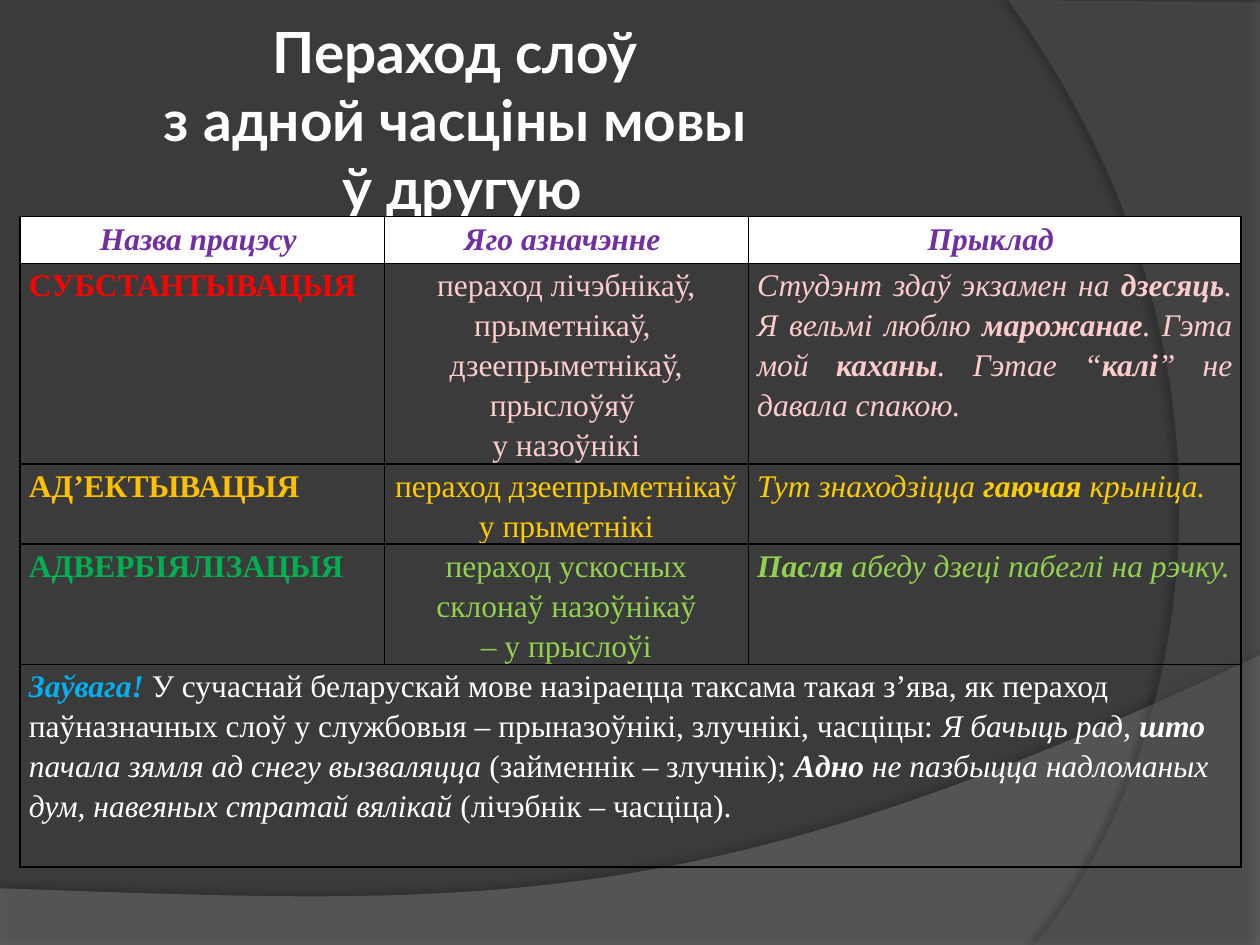
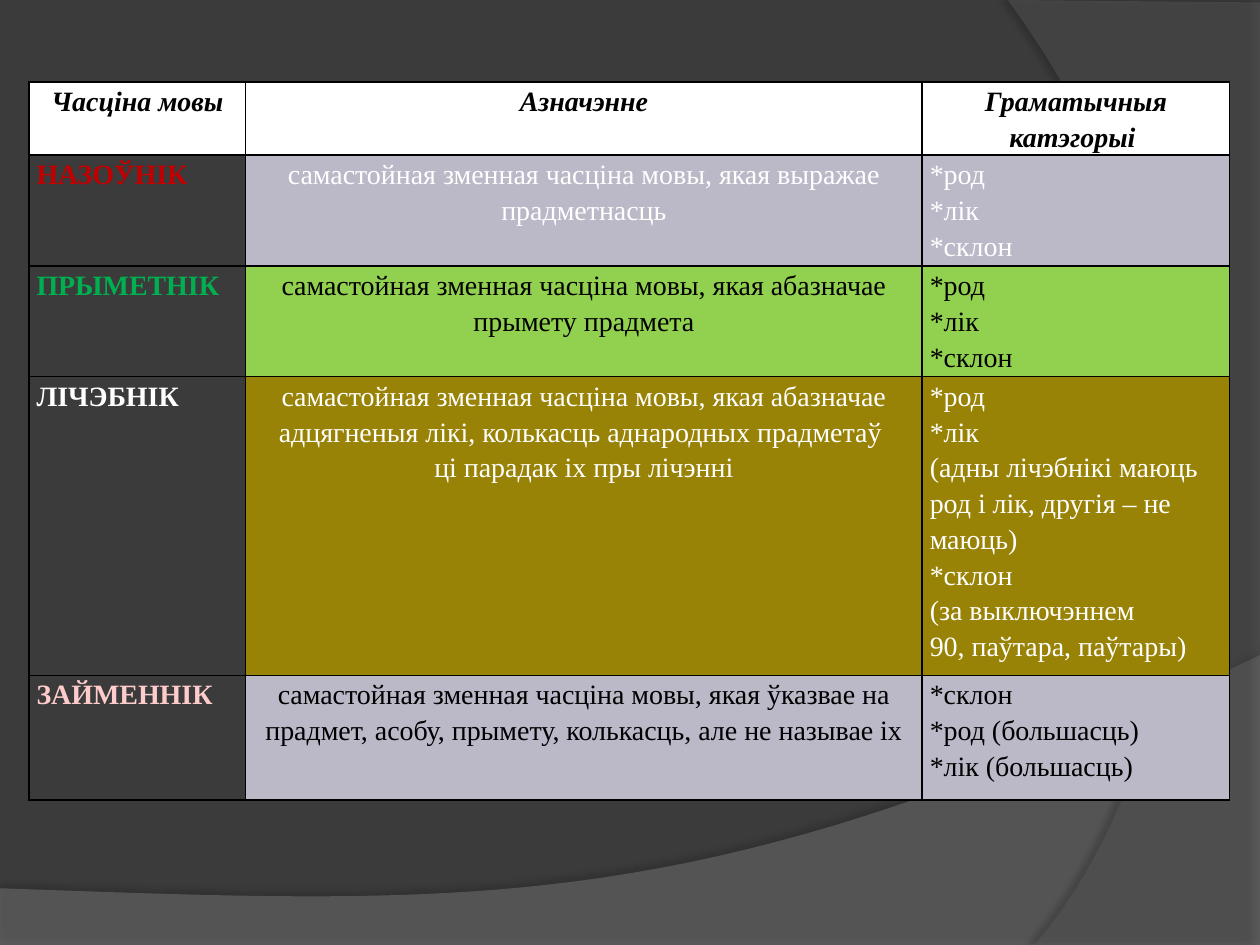
from lxml.etree import SubElement
from pptx import Presentation
from pptx.dml.color import RGBColor
from pptx.enum.text import MSO_ANCHOR as Anchor, MSO_AUTO_SIZE as AutoSize, PP_ALIGN as Align
from pptx.oxml.ns import qn
from pptx.util import Inches, Pt

COLOURS = {
    "back": "3B3B3B", "wave": "7F7F7F", "arc": "5E5E5E",
    "white": "FFFFFF", "black": "000000", "purple": "7030A0",
    "red": "FF0000", "dark red": "C00000", "pink": "FFCCCC",
    "amber": "FFC000", "yellow": "FFCC00", "green": "00B050",
    "lime": "92D050", "blue": "00B0F0", "lilac": "BBB8C8", "olive": "998307",
}
TITLE_FONT, TABLE_FONT = "Lato", "Times New Roman"
TITLE_LINES = ["Пераход слоў ", "з адной часціны мовы ", "ў другую"]

PROCESS_HEADS = ["Назва працэсу ", "Яго азначэнне ", "Прыклад "]
# Name, its colour, definition, example with |bold| words, text colour, example alignment
PROCESSES = [
    ("СУБСТАНТЫВАЦЫЯ", "red",
     ["пераход лічэбнікаў, прыметнікаў,  дзеепрыметнікаў, прыслоўяў ", "у назоўнікі"],
     "Студэнт здаў экзамен на |дзесяць|. Я вельмі люблю |марожанае|. "
     "Гэта мой |каханы|. Гэтае “|калі|” не давала спакою.", "pink", Align.JUSTIFY),
    ("АД’ЕКТЫВАЦЫЯ", "amber", ["пераход дзеепрыметнікаў ", "у прыметнікі"],
     "Тут знаходзіцца |гаючая| крыніца.", "yellow", Align.JUSTIFY),
    ("АДВЕРБІЯЛІЗАЦЫЯ", "green",
     ["пераход ускосных склонаў назоўнікаў", " – у прыслоўі "],
     "|Пасля| абеду дзеці пабеглі на рэчку.", "lime", Align.LEFT),
]
# Text, style letters (b bold, i italic) and, where it differs, colour
NOTE = [
    ("Заўвага! ", "bi", "blue"),
    ("У сучаснай беларускай мове назіраецца таксама такая з’ява, як пераход "
     "паўназначных слоў у службовыя – прыназоўнікі, злучнікі, часціцы: ", ""),
    ("Я бачыць рад, ", "i"), ("што", "bi"),
    (" пачала зямля ад снегу вызваляцца", "i"), (" (займеннік – злучнік); ", ""),
    ("Адно", "bi"), (" не пазбыцца надломаных дум, навеяных стратай вялікай ", "i"),
    ("(лічэбнік – часціца).", ""),
]

SPEECH_HEADS = ["Часціна мовы", "Азначэнне", "Граматычныя катэгорыі "]
DEFINITION = "самастойная зменная часціна мовы, якая "
# Name, its colour, definition, categories, text colour, cell fill
PARTS_OF_SPEECH = [
    ("НАЗОЎНІК", "dark red", [DEFINITION + "выражае прадметнасць"],
     ["*род", "*лік", "*склон"], "white", "lilac"),
    ("ПРЫМЕТНІК", "green", [DEFINITION + "абазначае прымету прадмета"],
     ["*род", "*лік", "*склон"], "black", "lime"),
    ("ЛІЧЭБНІК", "white",
     [DEFINITION + "абазначае адцягненыя лікі, колькасць аднародных прадметаў ",
      "ці парадак іх пры лічэнні"],
     ["*род", "*лік", "(адны лічэбнікі маюць род і лік, другія – не маюць)",
      "*склон", "(за выключэннем", "90, паўтара, паўтары)"], "white", "olive"),
    ("ЗАЙМЕННІК", "pink",
     [DEFINITION + "ўказвае на прадмет, асобу, прымету, колькасць, але не называе іх"],
     ["*склон", "*род (большасць)", "*лік (большасць)"], "black", "lilac"),
]


def rgb(name):
    return RGBColor.from_string(COLOURS[name])


def apply(target, formats):
    for name, value in formats.items():
        setattr(target, name, value)


def paint(fill, name=None):
    if name:
        fill.solid()
        fill.fore_color.rgb = rgb(name)
    else:
        fill.background()


# Backdrop
def curve(start, first, second, end, steps=40):
    """Points along a cubic curve, without its start."""
    points = []
    for step in range(1, steps + 1):
        t = step / steps
        weights = ((1 - t) ** 3, 3 * t * (1 - t) ** 2, 3 * t * t * (1 - t), t ** 3)
        points.append(tuple(sum(w * p[axis] for w, p in zip(weights, (start, first, second, end)))
                            for axis in (0, 1)))
    return points


def add_sheet(page, points, colour, opacity, shade, distance, direction):
    points = [(Inches(x), Inches(y)) for x, y in points]
    builder = page.shapes.build_freeform(*points[0])
    builder.add_line_segments(points[1:], close=True)
    sheet = builder.convert_to_shape()
    paint(sheet.fill, colour)
    sheet.line.fill.background()
    sheet.shadow.inherit = False
    tint = sheet._element.spPr.find(qn("a:solidFill"))[0]
    SubElement(tint, qn("a:alpha"), val=str(opacity * 1000))
    shadow = SubElement(sheet._element.spPr.find(qn("a:effectLst")), qn("a:outerShdw"),
                        blurRad=str(Pt(4)), dist=str(Pt(distance)), dir=str(direction * 60000))
    shadow_tint = SubElement(shadow, qn("a:srgbClr"), val=COLOURS["black"])
    SubElement(shadow_tint, qn("a:alpha"), val=str(shade * 1000))
    return sheet


def dress_master(deck, page):
    """Give every slide the dark background and the two curved sheets."""
    master = deck.slide_master
    paint(master.background.fill, "back")
    wave = [(0, 7.05), (0, 7.5), (10, 7.5), (10, 5.2)]
    wave += curve((10, 5.2), (5.59, 7.29), (3.91, 7.19), (0, 7.05))
    arc = [(10, 0.02), (10, 7.5), (8.21, 7.5)]
    arc += curve((8.21, 7.5), (9.35, 6.19), (10.18, 3), (8, 0))
    sheets = [add_sheet(page, wave, "wave", 45, 35, 3.5, 270),
              add_sheet(page, arc, "arc", 40, 45, 4, 180)]
    first = master.shapes[0]._element
    for sheet in sheets:
        first.addprevious(sheet._element)


# Title
def set_title(page, lines):
    title = page.shapes.title
    apply(title, dict(left=0, top=0, width=Inches(7.34), height=Inches(2.42)))
    edge = Inches(0.05)
    apply(title.text_frame, dict(
        text="\v".join(lines), auto_size=AutoSize.NONE, word_wrap=True,
        vertical_anchor=Anchor.MIDDLE, margin_left=edge, margin_right=edge,
        margin_top=edge, margin_bottom=Inches(0.59)))
    para = title.text_frame.paragraphs[0]
    para.alignment = Align.CENTER
    for span in para.runs:
        apply(span.font, dict(name=TITLE_FONT, size=Pt(32.4), bold=True))
        span.font.color.rgb = rgb("white")


# Tables
def add_grid(page, left, top, widths, heights, margin):
    frame = page.shapes.add_table(len(heights), len(widths), Inches(left), Inches(top),
                                  Inches(sum(widths)), Inches(sum(heights)))
    table = frame.table
    apply(table, dict(first_row=False, horz_banding=False))
    for column, width in zip(table.columns, widths):
        column.width = Inches(width)
    for row, height in zip(table.rows, heights):
        row.height = Inches(height)
    for cell in table.iter_cells():
        apply(cell, dict(margin_left=Inches(margin), margin_right=Inches(margin),
                         margin_top=0, margin_bottom=0))
        add_borders(cell)
        paint(cell.fill)
    return table


def add_borders(cell):
    properties = cell._tc.get_or_add_tcPr()
    for side in ("lnL", "lnR", "lnT", "lnB"):
        line = SubElement(properties, qn(f"a:{side}"), w=str(Pt(1)))
        SubElement(SubElement(line, qn("a:solidFill")), qn("a:srgbClr"), val=COLOURS["black"])


def write(cell, paras, size, colour, align=Align.LEFT, style="", fill=None):
    """Fill a cell; a paragraph is a string or a list of (text, style, colour) spans."""
    if fill:
        paint(cell.fill, fill)
    for index, content in enumerate(paras):
        frame = cell.text_frame
        para = frame.add_paragraph() if index else frame.paragraphs[0]
        apply(para, dict(alignment=align, line_spacing=1.15))
        spans = [(content, style)] if isinstance(content, str) else content
        for text, letters, *own_colour in spans:
            span = para.add_run()
            span.text = text
            apply(span.font, dict(name=TABLE_FONT, size=Pt(size),
                                  bold="b" in letters, italic="i" in letters))
            span.font.color.rgb = rgb(own_colour[0] if own_colour else colour)


def write_heads(table, heads, size, colour):
    for cell, head in zip(table.rows[0].cells, heads):
        write(cell, [head], size, colour, Align.CENTER, "bi", "white")


def example_spans(text):
    return [(part, "bi" if index % 2 else "i")
            for index, part in enumerate(text.split("|")) if part]


def fill_processes(page):
    size = 18
    table = add_grid(page, 0.16, 1.72, [2.89, 2.89, 3.91], [0.37, 0.96, 0.54, 0.57, 1.61], 0.07)
    write_heads(table, PROCESS_HEADS, size, "purple")
    for row, (name, name_colour, meaning, example, colour, align) in enumerate(PROCESSES, 1):
        write(table.cell(row, 0), [name], size, name_colour, style="b")
        write(table.cell(row, 1), meaning, size, colour, Align.CENTER)
        write(table.cell(row, 2), [example_spans(example)], size, colour, align)
    note_cell = table.cell(4, 0)
    note_cell.merge(table.cell(4, 2))
    write(note_cell, [NOTE], size, "white")


def fill_parts_of_speech(page):
    size = 16
    table = add_grid(page, 0.23, 0.65, [1.72, 5.37, 2.44], [0.58, 0.88, 0.88, 2.37, 0.99], 0.06)
    write_heads(table, SPEECH_HEADS, size, "black")
    for row, (name, name_colour, meaning, categories, colour, fill) in enumerate(PARTS_OF_SPEECH, 1):
        write(table.cell(row, 0), [name], size, name_colour, style="b")
        write(table.cell(row, 1), meaning, size, colour, Align.CENTER, fill=fill)
        write(table.cell(row, 2), categories, size, colour, fill=fill)


def main():
    deck = Presentation()
    apply(deck, dict(slide_width=Inches(10), slide_height=Inches(7.5)))
    title_only, blank = deck.slide_layouts[5], deck.slide_layouts[6]

    # Moving between parts of speech
    page = deck.slides.add_slide(title_only)
    dress_master(deck, page)
    set_title(page, TITLE_LINES)
    fill_processes(page)

    # Parts of speech and their categories
    fill_parts_of_speech(deck.slides.add_slide(blank))

    deck.save("out.pptx")


if __name__ == "__main__":
    main()
